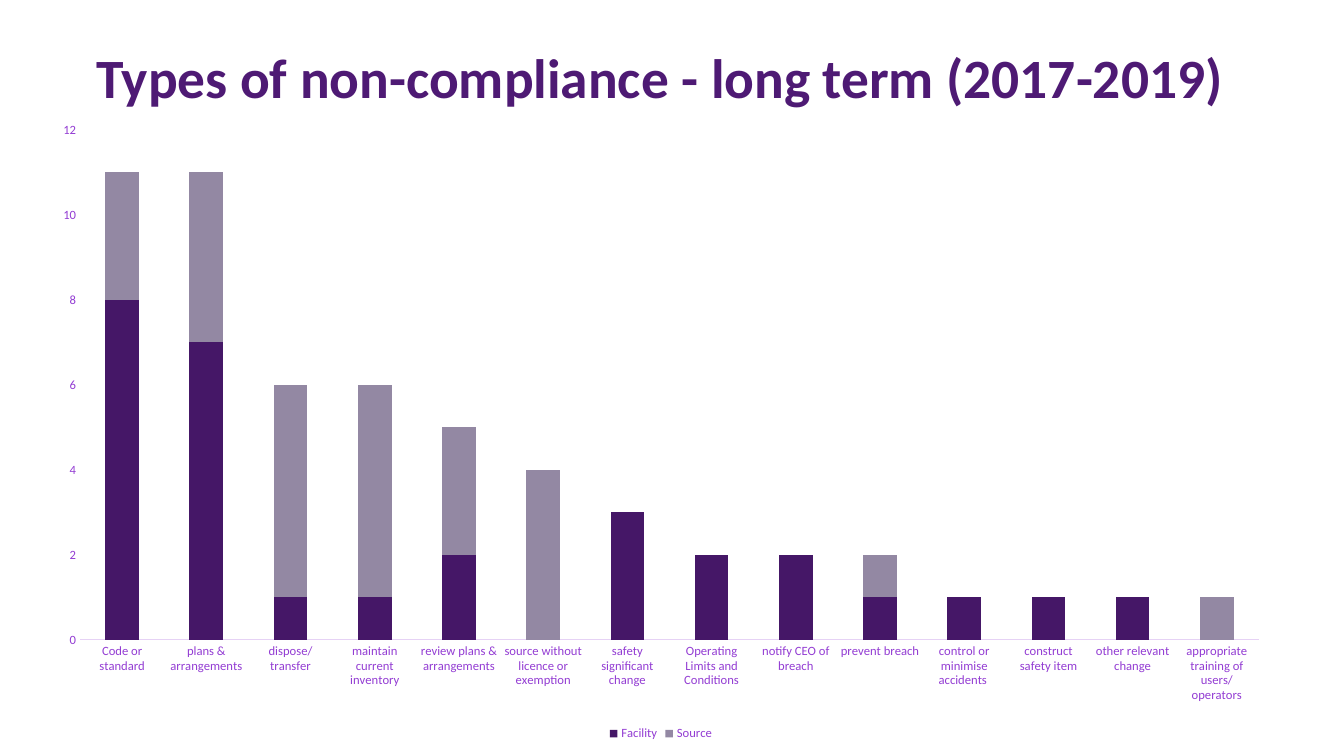
from lxml import etree
from pptx import Presentation
from pptx.chart.data import CategoryChartData
from pptx.dml.color import RGBColor
from pptx.enum.chart import XL_CHART_TYPE, XL_LEGEND_POSITION, XL_TICK_MARK
from pptx.enum.text import MSO_ANCHOR, MSO_AUTO_SIZE, PP_ALIGN
from pptx.oxml.ns import qn
from pptx.util import Pt

STACKED = XL_CHART_TYPE.COLUMN_STACKED
BOTTOM = XL_LEGEND_POSITION.BOTTOM
NO_TICK = XL_TICK_MARK.NONE

TITLE = "Types of non-compliance - long term (2017-2019)"
FONT = "Calibri"
COLORS = {"title": "4E1A74", "label": "933CD3", "axis": "E6D2F5",
          "Facility": "451767", "Source": "9388A3"}
SERIES = ("Facility", "Source")
ROWS = [
    ("Code or standard", 8, 3),
    ("plans & arrangements", 7, 4),
    ("dispose/transfer", 1, 5),
    ("maintain current inventory", 1, 5),
    ("review plans & arrangements", 2, 3),
    ("source without licence or exemption", None, 4),
    ("safety significant change", 3, None),
    ("Operating Limits and Conditions", 2, None),
    ("notify CEO of breach", 2, None),
    ("prevent breach", 1, 1),
    ("control or minimise accidents ", 1, None),
    ("construct safety item", 1, None),
    ("other relevant change", 1, None),
    ("appropriate training of users/operators", None, 1),
]

# Boxes in px: left, top, width, height
SLIDE_SIZE = (1344, 756)
TITLE_BOX = (86, 0, 1166, 146)
CHART_BOX = (38, 110, 1246, 635)
PLOT_BOX = (80, 130, 1179, 510)
EMU_PER_PX = 914400 / 100.8


def emu(lengths):
    return [round(n * EMU_PER_PX) for n in lengths]


def rgb(name):
    return RGBColor.from_string(COLORS[name])


def set_font(font, size, color):
    font.name = FONT
    font.size = Pt(size)
    font.color.rgb = rgb(color)


def place_plot(chart):
    """Fix the inner plot area at PLOT_BOX, as fractions of the chart."""
    left, top, width, height = CHART_BOX
    x, y, w, h = PLOT_BOX
    plot_area = chart.plots[0]._element.getparent()
    for old in plot_area.findall(qn("c:layout")):
        plot_area.remove(old)
    layout = etree.Element(qn("c:layout"))
    manual = etree.SubElement(layout, qn("c:manualLayout"))
    for tag, value in (("layoutTarget", "inner"), ("xMode", "edge"), ("yMode", "edge"),
                       ("x", (x - left) / width), ("y", (y - top) / height),
                       ("w", w / width), ("h", h / height)):
        etree.SubElement(manual, qn("c:" + tag)).set("val", str(value))
    plot_area.insert(0, layout)


def add_title(s):
    sp = s.shapes.title
    sp.left, sp.top, sp.width, sp.height = emu(TITLE_BOX)
    tf = sp.text_frame
    tf.text = TITLE
    tf.word_wrap = True
    tf.auto_size = MSO_AUTO_SIZE.NONE
    tf.vertical_anchor = MSO_ANCHOR.MIDDLE
    p = tf.paragraphs[0]
    p.alignment = PP_ALIGN.LEFT
    p.line_spacing = 1.1
    set_font(p.font, 39.6, "title")
    p.font.bold = True


def add_breach_chart(s):
    data = CategoryChartData()
    categories, *columns = zip(*ROWS)
    data.categories = categories
    for name, values in zip(SERIES, columns):
        data.add_series(name, values)
    chart = s.shapes.add_chart(STACKED, *emu(CHART_BOX), data).chart
    chart.has_title = False
    set_font(chart.font, 10, "title")

    plot = chart.plots[0]
    plot.gap_width = 150
    plot.overlap = 100
    plot.vary_by_categories = False
    for series in plot.series:
        series.format.fill.solid()
        series.format.fill.fore_color.rgb = rgb(series.name)

    for axis in (chart.category_axis, chart.value_axis):
        axis.has_major_gridlines = False
        axis.major_tick_mark = axis.minor_tick_mark = NO_TICK
        set_font(axis.tick_labels.font, 9, "label")
    line = chart.category_axis.format.line
    line.color.rgb = rgb("axis")
    line.width = Pt(0.75)
    values = chart.value_axis
    values.format.line.fill.background()
    values.minimum_scale, values.maximum_scale, values.major_unit = 0, 12, 2

    chart.has_legend = True
    chart.legend.position = BOTTOM
    chart.legend.include_in_layout = False
    set_font(chart.legend.font, 9, "label")
    place_plot(chart)


def main():
    prs = Presentation()
    prs.slide_width, prs.slide_height = emu(SLIDE_SIZE)
    s = prs.slides.add_slide(prs.slide_layouts[5])
    add_title(s)
    add_breach_chart(s)
    prs.save("out.pptx")


if __name__ == "__main__":
    main()
